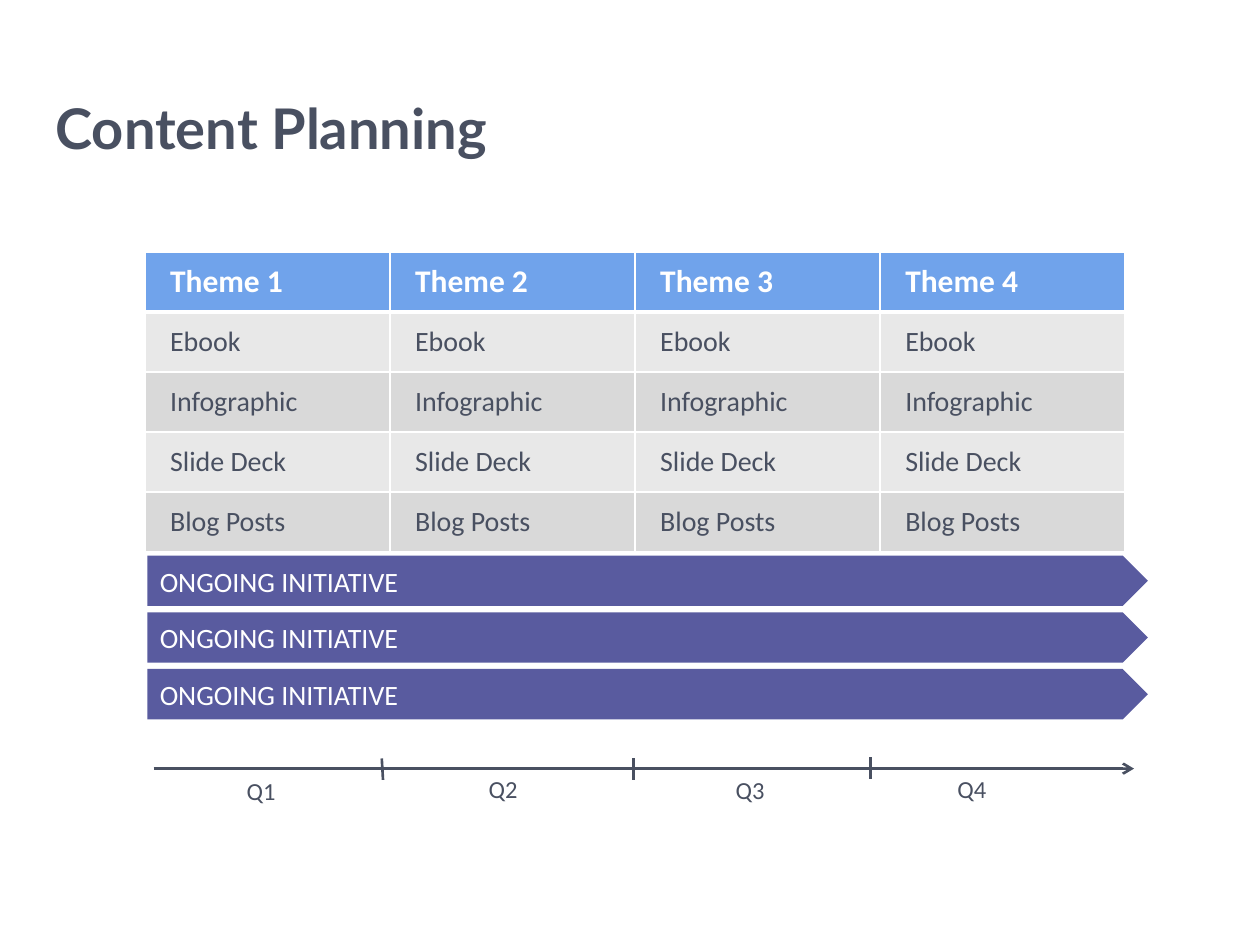
from dataclasses import dataclass

import pptx
import pptx.dml.color
import pptx.enum.shapes
import pptx.enum.text
import pptx.oxml
import pptx.oxml.ns
import pptx.util
from pptx.util import Inches

ANCHOR = pptx.enum.text.MSO_ANCHOR
ALIGN = pptx.enum.text.PP_ALIGN


@dataclass(frozen=True)
class Theme:
    ink: str = "495061"
    white: str = "FFFFFF"
    header: str = "70A3EB"
    bands: tuple[str, str] = ("E8E8E8", "D9D9D9")
    initiative: str = "595B9F"
    title_font: str = "Lato"
    body_font: str = "Calibri"
    title_size: int = 32
    header_size: int = 18
    body_size: int = 16
    quarter_size: int = 14
    axis_width: float = 1.5


@dataclass(frozen=True)
class Quarter:
    name: str
    left: float
    top: float


@dataclass(frozen=True)
class Tick:
    x1: float
    x2: float
    top: float


THEME = Theme()
THEMES = ["Theme 1", "Theme 2", "Theme 3", "Theme 4"]
CONTENT = ["Ebook", "Infographic", "Slide Deck", "Blog Posts"]
INITIATIVES = ["ONGOING INITIATIVE"] * 3
QUARTERS = [
    Quarter("Q1", 1.86, 6.11),
    Quarter("Q2", 3.78, 6.09),
    Quarter("Q3", 5.74, 6.1),
    Quarter("Q4", 7.5, 6.09),
]
TICKS = [Tick(3.03, 3.04, 6.02), Tick(5.03, 5.03, 6.02), Tick(6.91, 6.91, 6.01)]


def rgb(value: str) -> pptx.dml.color.RGBColor:
    return pptx.dml.color.RGBColor.from_string(value)


def write(tf, text: str, size: int, color: str, bold: bool = False,
          font: str = THEME.body_font) -> None:
    tf.text = text
    p = tf.paragraphs[0]
    p.alignment = ALIGN.LEFT
    r = p.runs[0]
    r.font.name = font
    r.font.size = pptx.util.Pt(size)
    r.font.bold = bold
    r.font.color.rgb = rgb(color)


def add_title(s, text: str) -> None:
    title = s.shapes.title
    title.left, title.top = Inches(0.34), Inches(0.66)
    title.width, title.height = Inches(9.42), Inches(0.69)
    title.text_frame.vertical_anchor = ANCHOR.MIDDLE
    write(title.text_frame, text, THEME.title_size, THEME.ink, True, THEME.title_font)


def set_borders(cell, top: int, bottom: int) -> None:
    tc_pr = cell._tc.get_or_add_tcPr()
    widths = {"lnL": 1, "lnR": 1, "lnT": top, "lnB": bottom}
    for i, (side, width) in enumerate(widths.items()):
        line = pptx.oxml.parse_xml(
            f'<a:{side} {pptx.oxml.ns.nsdecls("a")} w="{pptx.util.Pt(width)}">'
            f'<a:solidFill><a:srgbClr val="{THEME.white}"/></a:solidFill></a:{side}>'
        )
        tc_pr.insert(i, line)


def add_plan(s) -> None:
    rows = [THEMES] + [[item] * len(THEMES) for item in CONTENT]
    frame = s.shapes.add_table(len(rows), len(THEMES), Inches(1.15), Inches(2),
                               Inches(7.78), Inches(2.38))
    for i, row in enumerate(rows):
        is_header = i == 0
        fill = THEME.header if is_header else THEME.bands[(i - 1) % 2]
        size = THEME.header_size if is_header else THEME.body_size
        color = THEME.white if is_header else THEME.ink
        for j, text in enumerate(row):
            cell = frame.table.cell(i, j)
            cell.fill.solid()
            cell.fill.fore_color.rgb = rgb(fill)
            cell.vertical_anchor = ANCHOR.MIDDLE
            write(cell.text_frame, text, size, color, is_header)
            p_pr = cell.text_frame.paragraphs[0]._p.get_or_add_pPr()
            p_pr.set("marL", str(Inches(0.1)))
            set_borders(cell, 3 if i == 1 else 1, 3 if is_header else 1)


def add_initiative(s, text: str, top: float) -> None:
    sp = s.shapes.add_shape(pptx.enum.shapes.MSO_SHAPE.PENTAGON, Inches(1.17),
                            Inches(top), Inches(7.94), Inches(0.4))
    sp.shadow.inherit = False
    sp.fill.solid()
    sp.fill.fore_color.rgb = rgb(THEME.initiative)
    sp.line.fill.background()
    sp.text_frame.vertical_anchor = ANCHOR.MIDDLE
    write(sp.text_frame, text, THEME.body_size, THEME.white)


def add_line(s, x1: float, y1: float, x2: float, y2: float, arrow: bool = False) -> None:
    line = s.shapes.add_connector(pptx.enum.shapes.MSO_CONNECTOR.STRAIGHT,
                                  Inches(x1), Inches(y1), Inches(x2), Inches(y2))
    line.line.color.rgb = rgb(THEME.ink)
    line.line.width = pptx.util.Pt(THEME.axis_width)
    nsdecls = pptx.oxml.ns.nsdecls("a")
    if arrow:
        line.line._get_or_add_ln().append(
            pptx.oxml.parse_xml(f'<a:tailEnd {nsdecls} type="arrow"/>'))
    line._element.spPr.append(pptx.oxml.parse_xml(f"<a:effectLst {nsdecls}/>"))


def add_quarter(s, quarter: Quarter) -> None:
    box = s.shapes.add_textbox(Inches(quarter.left), Inches(quarter.top),
                               Inches(0.43), Inches(0.34))
    tf = box.text_frame
    tf.word_wrap = False
    tf.auto_size = pptx.enum.text.MSO_AUTO_SIZE.SHAPE_TO_FIT_TEXT
    write(tf, quarter.name, THEME.quarter_size, THEME.ink)


def main() -> None:
    prs = pptx.Presentation()
    prs.slide_width, prs.slide_height = Inches(10), Inches(7.5)
    s = prs.slides.add_slide(prs.slide_layouts[5])
    add_title(s, "Content Planning")
    add_line(s, 1.22, 6.1, 9, 6.1, arrow=True)
    for tick in TICKS:
        add_line(s, tick.x1, tick.top, tick.x2, tick.top + 0.17)
    for quarter in QUARTERS:
        add_quarter(s, quarter)
    add_plan(s)
    for i, text in enumerate(INITIATIVES):
        add_initiative(s, text, 4.41 + 0.45 * i)
    prs.save("out.pptx")


if __name__ == "__main__":
    main()
